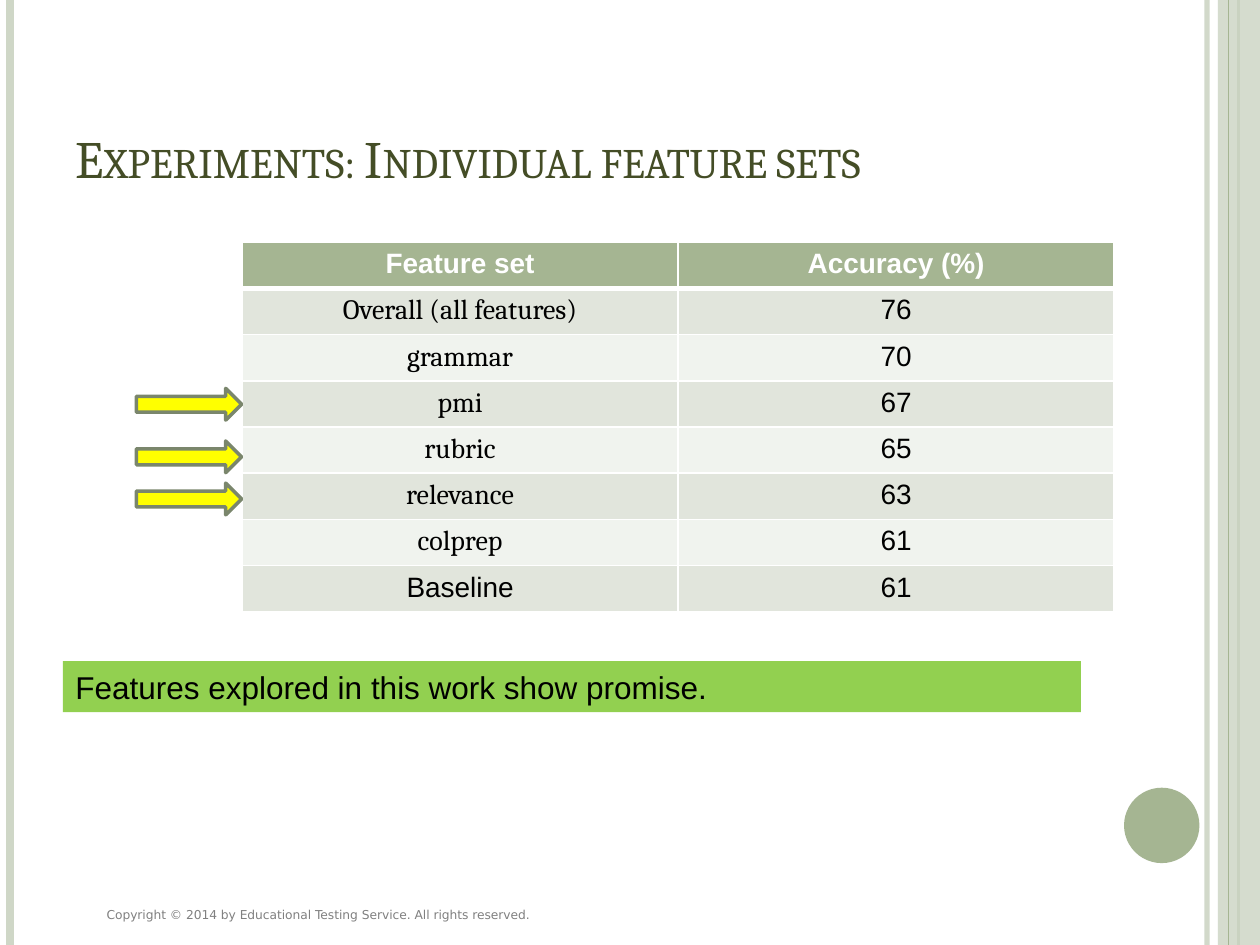
from dataclasses import dataclass
from typing import Any, Optional

from lxml.etree import SubElement
from pptx import Presentation
from pptx.dml.color import RGBColor
from pptx.enum.shapes import MSO_CONNECTOR, MSO_SHAPE
from pptx.enum.text import MSO_ANCHOR, PP_ALIGN
from pptx.oxml.ns import qn
from pptx.util import Cm, Pt


@dataclass(frozen=True)
class Theme:
    sage: str = "A5B592"
    pale: str = "CFD7C7"
    olive: str = "444D26"
    edge: str = "7A866C"
    gray: str = "808080"
    black: str = "000000"
    white: str = "FFFFFF"
    lime: str = "92D050"
    gold: str = "FFFF00"
    bands: tuple = ("E1E5DC", "F0F3EE")
    serif: str = "Cambria"
    sans: str = "Arial"
    small: str = "DejaVu Sans"
    title: float = 30
    note: float = 18
    cell: float = 16
    foot: float = 7


@dataclass(frozen=True)
class Box:
    left: float
    top: float
    width: float
    height: float

    def place(self) -> tuple:
        return Cm(self.left), Cm(self.top), Cm(self.width), Cm(self.height)


@dataclass(frozen=True)
class Rule:
    left: float
    color: str
    weight: float
    alpha: Optional[int] = None


@dataclass(frozen=True)
class Row:
    name: str
    score: str
    font: str


T = Theme()
WIDE, HIGH = 25.4, 19.05


def set_fill(fill: Any, color: str, alpha: Optional[int] = None) -> None:
    fill.solid()
    fill.fore_color.rgb = RGBColor.from_string(color)
    if alpha:
        node = fill._xPr.find(qn("a:solidFill"))[0]
        SubElement(node, qn("a:alpha"), val=str(alpha * 1000))


def set_font(run: Any, face: str, size: float, color: str, bold: bool = False) -> None:
    font = run.font
    font.name, font.size, font.bold = face, Pt(size), bold
    font.color.rgb = RGBColor.from_string(color)


def write(frame: Any, text: str, face: str, size: float, color: str) -> Any:
    frame.word_wrap = True
    frame.text = text
    para = frame.paragraphs[0]
    para.alignment = PP_ALIGN.LEFT
    set_font(para.runs[0], face, size, color)
    return para.runs[0]


def draw_rule(slide: Any, rule: Rule) -> None:
    line = slide.shapes.add_connector(
        MSO_CONNECTOR.STRAIGHT, Cm(rule.left), 0, Cm(rule.left), Cm(HIGH))
    set_fill(line.line.fill, rule.color, rule.alpha)
    line.line.width = Pt(rule.weight)
    SubElement(line._element.spPr, qn("a:effectLst"))


def draw_shape(slide: Any, kind: Any, box: Box, color: str,
               alpha: Optional[int] = None, edge: Optional[str] = None) -> Any:
    shape = slide.shapes.add_shape(kind, *box.place())
    shape.shadow.inherit = False
    set_fill(shape.fill, color, alpha)
    if edge:
        set_fill(shape.line.fill, edge)
        shape.line.width = Pt(2)
    else:
        shape.line.fill.background()
    return shape


def draw_text(slide: Any, box: Box, text: str, face: str, size: float, color: str) -> Any:
    shape = slide.shapes.add_textbox(*box.place())
    return shape.text_frame, write(shape.text_frame, text, face, size, color)


def draw_cell(cell: Any, text: str, face: str, color: str, fill: str, head: bool) -> None:
    props = cell._tc.get_or_add_tcPr()
    for side in "LRTB":
        weight = Pt(3 if head and side == "B" else 1)
        line = SubElement(props, qn(f"a:ln{side}"), w=str(weight))
        paint = SubElement(line, qn("a:solidFill"))
        SubElement(paint, qn("a:srgbClr"), val=T.white)
    set_fill(cell.fill, fill)
    cell.text = text
    para = cell.text_frame.paragraphs[0]
    para.alignment = PP_ALIGN.CENTER
    set_font(para.runs[0], face, T.cell, color, head)


def draw_table(slide: Any, box: Box, rows: list[Row]) -> None:
    grid = slide.shapes.add_table(len(rows), 2, *box.place()).table
    for i, row in enumerate(rows):
        head = i == 0
        fill = T.sage if head else T.bands[(i - 1) % 2]
        color = T.white if head else T.black
        for j, (text, face) in enumerate(((row.name, row.font), (row.score, T.sans))):
            draw_cell(grid.cell(i, j), text, face, color, fill, head)


RULES = [
    Rule(24.33, T.pale, 3, 93),
    Rule(0.2, T.pale, 4.5),
    Rule(24.97, T.sage, 1.5),
    Rule(24.77, T.sage, 0.75),
]
ROWS = [
    Row("Feature set", "Accuracy (%)", T.sans),
    Row("Overall (all features)", "76", T.serif),
    Row("grammar", "70", T.serif),
    Row("pmi", "67", T.serif),
    Row("rubric", "65", T.serif),
    Row("relevance", "63", T.serif),
    Row("colprep", "61", T.serif),
    Row("Baseline", "61", T.sans),
]
ARROWS = [7.83, 8.89, 9.74]


def main() -> None:
    deck = Presentation()
    deck.slide_width, deck.slide_height = Cm(WIDE), Cm(HIGH)
    slide = deck.slides.add_slide(deck.slide_layouts[6])

    # Side rules, right band and dot
    for rule in RULES[:3]:
        draw_rule(slide, rule)
    draw_shape(slide, MSO_SHAPE.RECTANGLE, Box(24.55, 0, 0.85, HIGH), T.pale, 87)
    draw_rule(slide, RULES[3])
    draw_shape(slide, MSO_SHAPE.OVAL, Box(22.66, 15.88, 1.52, 1.52), T.sage)

    # Footer and title
    draw_text(slide, Box(1.9, 18.16, 15.88, 0.56),
              "Copyright © 2014 by Educational Testing Service. All rights reserved.",
              T.small, T.foot, T.gray)
    frame, run = draw_text(slide, Box(1.27, 0.76, 20.75, 3.18),
                           "Experiments: Individual feature sets",
                           T.serif, T.title, T.olive)
    frame.vertical_anchor = MSO_ANCHOR.BOTTOM
    run.font._element.set("cap", "small")

    # Scores
    draw_table(slide, Box(4.88, 4.88, 17.58, 0.9 * len(ROWS)), ROWS)

    # Closing note
    note = draw_shape(slide, MSO_SHAPE.RECTANGLE, Box(1.27, 13.33, 20.52, 1.03), T.lime)
    write(note.text_frame, "Features explored in this work show promise.",
          T.sans, T.note, T.black)

    # Arrows beside the new features
    for top in ARROWS:
        draw_shape(slide, MSO_SHAPE.RIGHT_ARROW, Box(2.75, top, 2.12, 0.64),
                   T.gold, edge=T.edge)

    deck.save("out.pptx")


if __name__ == "__main__":
    main()
